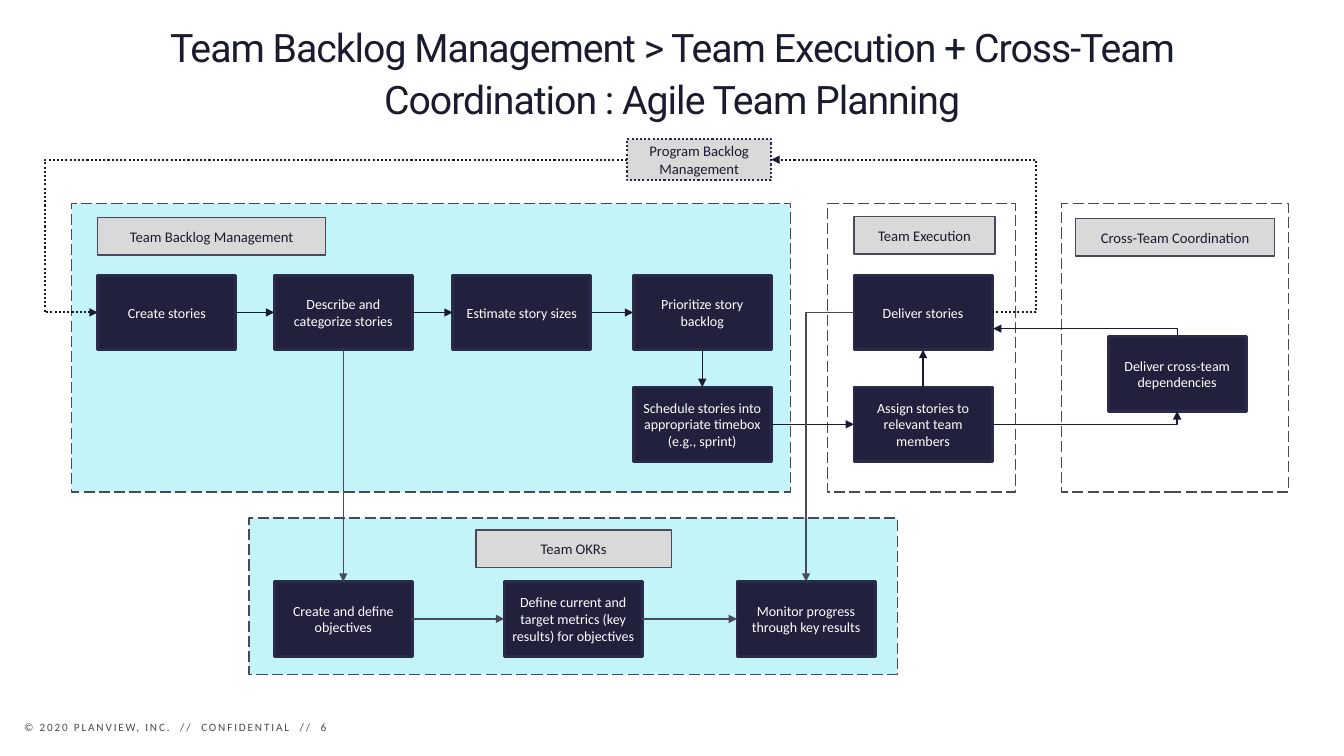
from dataclasses import dataclass
from enum import IntEnum
from typing import NamedTuple, Optional

from lxml.etree import SubElement
from pptx import Presentation
from pptx.dml.color import RGBColor
from pptx.enum.dml import MSO_LINE
from pptx.enum.shapes import MSO_CONNECTOR, MSO_SHAPE
from pptx.enum.text import MSO_ANCHOR, MSO_AUTO_SIZE, PP_ALIGN
from pptx.oxml.ns import qn
from pptx.shapes.autoshape import Shape
from pptx.shapes.connector import Connector
from pptx.slide import Slide
from pptx.text.text import TextFrame
from pptx.util import Inches, Pt


@dataclass(frozen=True)
class Theme:
    ink: str = "1A1B2F"
    slate: str = "484959"
    navy: str = "21213D"
    navy_edge: str = "2A2B4B"
    grey: str = "D9D9D9"
    cyan: str = "12D6E0"
    white: str = "FFFFFF"
    heading_font: str = "Roboto"
    text_font: str = "Calibri"
    heading_size: float = 28
    label_size: float = 10.5
    step_size: float = 10
    footer_size: float = 8


class Side(IntEnum):
    TOP = 0
    LEFT = 1
    BOTTOM = 2
    RIGHT = 3


class Area(NamedTuple):
    left: float
    top: float
    width: float
    height: float


class Zone(NamedTuple):
    area: Area
    tinted: bool


class Label(NamedTuple):
    text: str
    area: Area
    dotted: bool = False


class Step(NamedTuple):
    text: str
    left: float
    top: float


class Flow(NamedTuple):
    source: str
    source_side: Side
    target: str
    target_side: Side
    color: str
    bend: Optional[str] = None
    adjust: Optional[float] = None
    dotted: bool = False


THEME = Theme()
STEP_WIDTH, STEP_HEIGHT = 1.37, 0.74
STORY_TOP, ASSIGN_TOP, OKR_TOP = 2.73, 3.84, 5.77
ZONE_TOP, ZONE_HEIGHT = 2.02, 2.86
LABEL_HEIGHT = 0.37
PROGRAM = "Program Backlog Management"
CREATE, DESCRIBE = "Create stories", "Describe and categorize stories"
ESTIMATE, PRIORITIZE = "Estimate story sizes", "Prioritize story backlog"
SCHEDULE = "Schedule stories into appropriate timebox (e.g., sprint)"
DELIVER, ASSIGN = "Deliver stories", "Assign stories to relevant team members"
CROSS_TEAM = "Deliver cross-team dependencies"
OBJECTIVES = "Create and define objectives"
METRICS = "Define current and target metrics (key results) for objectives"
MONITOR = "Monitor progress through key results"

ZONES = [
    Zone(Area(0.71, ZONE_TOP, 7.13, ZONE_HEIGHT), True),
    Zone(Area(2.47, 5.14, 6.43, 1.55), True),
    Zone(Area(8.21, ZONE_TOP, 1.86, ZONE_HEIGHT), False),
    Zone(Area(10.53, ZONE_TOP, 2.25, ZONE_HEIGHT), False),
]
LABELS = [
    Label("Team Backlog Management", Area(0.97, 2.16, 2.26, LABEL_HEIGHT)),
    Label("Team Execution", Area(8.47, 2.15, 1.4, LABEL_HEIGHT)),
    Label("Cross-Team Coordination", Area(10.67, 2.17, 1.97, LABEL_HEIGHT)),
    Label("Team OKRs", Area(4.72, 5.26, 1.94, LABEL_HEIGHT)),
    Label(PROGRAM, Area(6.22, 1.38, 1.43, 0.41), dotted=True),
]
STEPS = [
    Step(CREATE, 0.97, STORY_TOP),
    Step(DESCRIBE, 2.72, STORY_TOP),
    Step(ESTIMATE, 4.49, STORY_TOP),
    Step(PRIORITIZE, 6.28, STORY_TOP),
    Step(DELIVER, 8.47, STORY_TOP),
    Step(SCHEDULE, 6.28, ASSIGN_TOP),
    Step(ASSIGN, 8.47, ASSIGN_TOP),
    Step(CROSS_TEAM, 10.99, 3.34),
    Step(OBJECTIVES, 2.72, OKR_TOP),
    Step(METRICS, 5, OKR_TOP),
    Step(MONITOR, 7.31, OKR_TOP),
]
FLOWS = [
    Flow(CREATE, Side.RIGHT, DESCRIBE, Side.LEFT, THEME.ink),
    Flow(DESCRIBE, Side.RIGHT, ESTIMATE, Side.LEFT, THEME.ink),
    Flow(ESTIMATE, Side.RIGHT, PRIORITIZE, Side.LEFT, THEME.ink),
    Flow(PRIORITIZE, Side.BOTTOM, SCHEDULE, Side.TOP, THEME.ink),
    Flow(SCHEDULE, Side.RIGHT, ASSIGN, Side.LEFT, THEME.ink),
    Flow(ASSIGN, Side.TOP, DELIVER, Side.BOTTOM, THEME.ink),
    Flow(OBJECTIVES, Side.RIGHT, METRICS, Side.LEFT, THEME.slate),
    Flow(METRICS, Side.RIGHT, MONITOR, Side.LEFT, THEME.slate),
    Flow(DESCRIBE, Side.BOTTOM, OBJECTIVES, Side.TOP, THEME.slate),
    Flow(ASSIGN, Side.RIGHT, CROSS_TEAM, Side.BOTTOM, THEME.ink, "bentConnector2"),
    Flow(DELIVER, Side.LEFT, MONITOR, Side.TOP, THEME.slate, "bentConnector2"),
    Flow(DELIVER, Side.RIGHT, PROGRAM, Side.RIGHT, THEME.ink, "bentConnector3", -0.2, True),
    Flow(PROGRAM, Side.LEFT, CREATE, Side.LEFT, THEME.ink, "bentConnector3", 1.1, True),
]


def format_text(frame: TextFrame, font: str, size: float, color: str,
                align: PP_ALIGN = PP_ALIGN.CENTER, spacing: float = 0) -> None:
    paragraph = frame.paragraphs[0]
    paragraph.alignment = align
    for run in paragraph.runs:
        run.font.name = font
        run.font.size = Pt(size)
        run.font.color.rgb = RGBColor.from_string(color)
        if spacing:
            run.font._element.set("spc", str(round(spacing * 100)))


def add_box(slide: Slide, area: Area, fill: Optional[str], edge: str, weight: float,
            dash: Optional[MSO_LINE] = None) -> Shape:
    box = slide.shapes.add_shape(MSO_SHAPE.RECTANGLE, *map(Inches, area))
    box.shadow.inherit = False
    if fill:
        box.fill.solid()
        box.fill.fore_color.rgb = RGBColor.from_string(fill)
    else:
        box.fill.background()
    box.line.color.rgb = RGBColor.from_string(edge)
    box.line.width = Pt(weight)
    if dash:
        box.line.dash_style = dash
    return box


def add_zone(slide: Slide, zone: Zone) -> None:
    box = add_box(slide, zone.area, THEME.cyan if zone.tinted else None,
                  THEME.slate, 1, MSO_LINE.LONG_DASH)
    if zone.tinted:
        tint = box._element.spPr.find(qn("a:solidFill"))[0]
        SubElement(tint, qn("a:alpha"), val="25000")


def add_label(slide: Slide, label: Label) -> Shape:
    edge, weight, dash = ((THEME.navy_edge, 1.5, MSO_LINE.ROUND_DOT) if label.dotted
                          else (THEME.slate, 1, None))
    box = add_box(slide, label.area, THEME.grey, edge, weight, dash)
    box.text_frame.text = label.text
    format_text(box.text_frame, THEME.text_font, THEME.label_size, THEME.ink)
    return box


def add_step(slide: Slide, step: Step) -> Shape:
    area = Area(step.left, step.top, STEP_WIDTH, STEP_HEIGHT)
    box = add_box(slide, area, THEME.navy, THEME.navy_edge, 2.08)
    frame = box.text_frame
    frame.text = step.text
    frame.margin_left = frame.margin_right = Inches(0.06)
    frame.margin_top = frame.margin_bottom = Inches(0.03)
    format_text(frame, THEME.text_font, THEME.step_size, THEME.white)
    return box


def style_arrow(arrow: Connector, color: str, dotted: bool = False, end: str = "tailEnd",
                bend: Optional[str] = None, adjust: Optional[float] = None) -> None:
    arrow.line.color.rgb = RGBColor.from_string(color)
    arrow.line.width = Pt(1.5 if dotted else 1)
    if dotted:
        arrow.line.dash_style = MSO_LINE.ROUND_DOT
    properties = arrow._element.spPr
    SubElement(properties.find(qn("a:ln")), qn(f"a:{end}"), type="triangle")
    SubElement(properties, qn("a:effectLst"))
    if bend:
        geometry = properties.find(qn("a:prstGeom"))
        geometry.set("prst", bend)
        if adjust is not None:
            SubElement(geometry.find(qn("a:avLst")), qn("a:gd"), name="adj1",
                       fmla=f"val {round(adjust * 100000)}")


def add_flow(slide: Slide, flow: Flow, boxes: dict[str, Shape]) -> None:
    kind = MSO_CONNECTOR.ELBOW if flow.bend else MSO_CONNECTOR.STRAIGHT
    arrow = slide.shapes.add_connector(kind, 0, 0, 0, 0)
    arrow.begin_connect(boxes[flow.source], flow.source_side)
    arrow.end_connect(boxes[flow.target], flow.target_side)
    style_arrow(arrow, flow.color, flow.dotted, bend=flow.bend, adjust=flow.adjust)


def add_title(slide: Slide) -> None:
    title = slide.shapes.title
    title.left, title.top, title.width, title.height = map(Inches, (0.51, 0.08, 12.31, 0.77))
    frame = title.text_frame
    frame.text = ("Team Backlog Management > Team Execution + Cross-Team "
                  "Coordination : Agile Team Planning")
    frame.auto_size = MSO_AUTO_SIZE.NONE
    frame.vertical_anchor = MSO_ANCHOR.TOP
    frame.margin_top = frame.margin_bottom = Inches(0.1)
    frame.paragraphs[0].line_spacing = Pt(37.3)
    format_text(frame, THEME.heading_font, THEME.heading_size, THEME.ink, spacing=-0.7)


def add_footer(slide: Slide) -> None:
    frame = slide.shapes.add_textbox(*map(Inches, (0.14, 7.1, 3.72, 0.24))).text_frame
    frame.text = "© 2020 PLANVIEW, INC.  //  CONFIDENTIAL  //  6"
    format_text(frame, THEME.text_font, THEME.footer_size, THEME.slate, PP_ALIGN.LEFT, 1.3)


def main() -> None:
    deck = Presentation()
    deck.slide_width, deck.slide_height = Inches(13.33), Inches(7.5)
    slide = deck.slides.add_slide(deck.slide_layouts[5])
    add_title(slide)
    add_footer(slide)
    for zone in ZONES:
        add_zone(slide, zone)
    boxes = {label.text: add_label(slide, label) for label in LABELS}
    boxes |= {step.text: add_step(slide, step) for step in STEPS}
    for flow in FLOWS:
        add_flow(slide, flow, boxes)
    handoff = slide.shapes.add_connector(
        MSO_CONNECTOR.ELBOW, *map(Inches, (9.85, 3.26, 11.68, 3.34)))
    style_arrow(handoff, THEME.ink, end="headEnd", bend="bentConnector2")
    deck.save("out.pptx")


if __name__ == "__main__":
    main()
